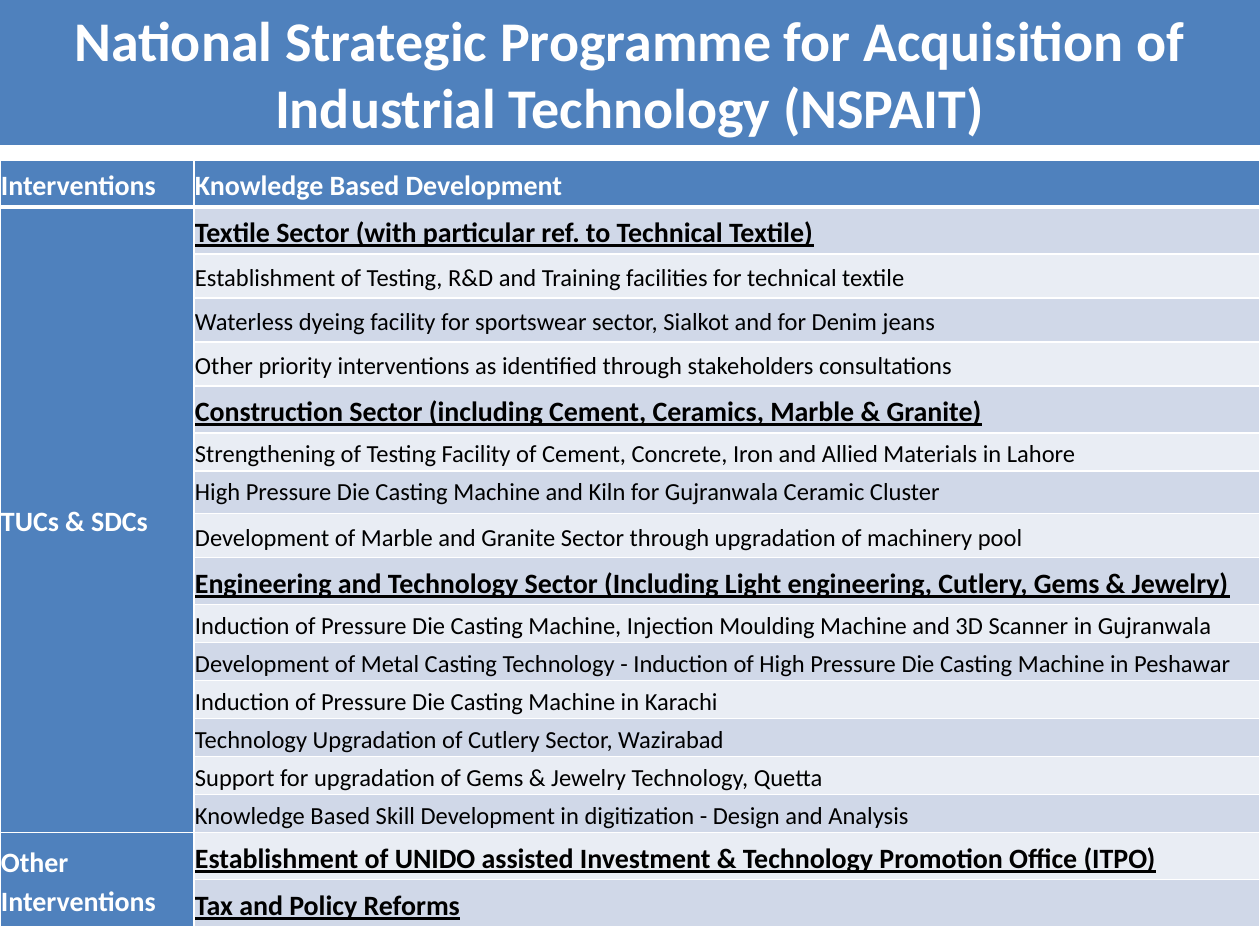
from lxml import etree
from pptx import Presentation
from pptx import util as u
from pptx.dml.color import RGBColor
from pptx.enum import text
from pptx.oxml import ns

PX = 914400 // 126
BLUE = RGBColor(0x4F, 0x81, 0xBD)
BAND_DARK = RGBColor(0xD0, 0xD8, 0xE8)
BAND_LIGHT = RGBColor(0xE9, 0xED, 0xF4)
WHITE = RGBColor(255, 255, 255)
BLACK = RGBColor(0, 0, 0)

TITLE = "National Strategic Programme for Acquisition of Industrial Technology (NSPAIT)"
HEADER = ("Interventions", "Knowledge Based Development")
HEADING_H, ROOMY_H, MEDIUM_H, TIGHT_H = 47, 44, 43, 38
CERAMIC = "High Pressure Die Casting Machine and Kiln for Gujranwala Ceramic Cluster"

# Each group spans its rows; a row is (wording, height), and HEADING_H marks a heading.
GROUPS = [
    ("TUCs & SDCs", [
        ("Textile Sector (with particular ref. to Technical Textile)", HEADING_H),
        ("Establishment of Testing, R&D and Training facilities for technical textile", ROOMY_H),
        ("Waterless dyeing facility for sportswear sector, Sialkot and for Denim jeans", ROOMY_H),
        ("Other priority interventions as identified through stakeholders consultations", ROOMY_H),
        ("Construction Sector (including Cement, Ceramics, Marble & Granite)", HEADING_H),
        ("Strengthening of Testing Facility of Cement, Concrete, Iron and Allied Materials in Lahore", TIGHT_H),
        (CERAMIC, MEDIUM_H),
        ("Development of Marble and Granite Sector through upgradation of machinery pool", ROOMY_H),
        ("Engineering and Technology Sector (Including Light engineering, Cutlery, Gems & Jewelry)", HEADING_H),
        ("Induction of Pressure Die Casting Machine, Injection Moulding Machine and 3D Scanner in Gujranwala", TIGHT_H),
        ("Development of Metal Casting Technology - Induction of High Pressure Die Casting Machine in Peshawar", TIGHT_H),
        ("Induction of Pressure Die Casting Machine in Karachi", TIGHT_H),
        ("Technology Upgradation of Cutlery Sector, Wazirabad", TIGHT_H),
        ("Support for upgradation of Gems & Jewelry Technology, Quetta", TIGHT_H),
        ("Knowledge Based Skill Development in digitization - Design and Analysis", TIGHT_H),
    ]),
    ("Other Interventions", [
        ("Establishment of UNIDO assisted Investment & Technology Promotion Office (ITPO)", HEADING_H),
        ("Tax and Policy Reforms", HEADING_H),
    ]),
]

LABEL = dict(size=u.Pt(16), bold=True, underline=False)
HEADING = dict(size=u.Pt(16), bold=True, underline=True)
ITEM = dict(size=u.Pt(14), bold=False, underline=False)
CELL = dict(margin_left=PX, margin_right=PX, margin_top=0, margin_bottom=0,
            vertical_anchor=text.MSO_ANCHOR.MIDDLE)


def set_all(target, values):
    for name, value in values.items():
        setattr(target, name, value)


def place(shape, box):
    set_all(shape, dict(zip(("left", "top", "width", "height"), (n * PX for n in box))))


def write(paragraph, words, color, font):
    run = paragraph.add_run()
    run.text = words
    set_all(run.font, dict(font, name="Calibri"))
    run.font.color.rgb = color


def set_borders(cell, bottom):
    """White rules of 1 pt, with the given weight below; they precede the fill."""
    properties = cell._tc.get_or_add_tcPr()
    for index, side in enumerate("LRTB"):
        line = etree.Element(ns.qn(f"a:ln{side}"), w=str(u.Pt(bottom if side == "B" else 1)))
        fill = etree.SubElement(line, ns.qn("a:solidFill"))
        etree.SubElement(fill, ns.qn("a:srgbClr"), val=str(WHITE))
        properties.insert(index, line)


def fill_cell(cell, words, fill, color, font, bottom=1):
    set_all(cell, CELL)
    cell.fill.solid()
    cell.fill.fore_color.rgb = fill
    set_borders(cell, bottom)
    paragraph = cell.text_frame.paragraphs[0]
    paragraph.line_spacing = 1.15
    write(paragraph, words, color, font)


def title_band(slide, box):
    title = slide.shapes.title
    place(title, box)
    title.fill.solid()
    title.fill.fore_color.rgb = BLUE
    set_all(title.text_frame, dict(word_wrap=True, auto_size=text.MSO_AUTO_SIZE.NONE,
                                   vertical_anchor=text.MSO_ANCHOR.MIDDLE))
    paragraph = title.text_frame.paragraphs[0]
    paragraph.alignment = text.PP_ALIGN.CENTER
    write(paragraph, TITLE, WHITE, dict(size=u.Pt(32), bold=True))


def interventions_table(slide, box, label_width):
    left, top, width, height = (n * PX for n in box)
    heights = [HEADING_H] + [h for _, rows in GROUPS for _, h in rows]
    table = slide.shapes.add_table(len(heights), 2, left, top, width, height).table
    table.columns[0].width = label_width * PX
    table.columns[1].width = width - label_width * PX
    for row, row_height in zip(table.rows, heights):
        row.height = row_height * PX
    for column, words in enumerate(HEADER):
        fill_cell(table.cell(0, column), words, BLUE, WHITE, LABEL, bottom=3)

    first = 1
    for label, rows in GROUPS:
        last = first + len(rows) - 1
        table.cell(first, 0).merge(table.cell(last, 0))
        fill_cell(table.cell(first, 0), label, BLUE, WHITE, LABEL)
        for index, (words, row_height) in enumerate(rows, first):
            cell = table.cell(index, 1)
            band = BAND_DARK if index % 2 else BAND_LIGHT
            fill_cell(cell, words, band, BLACK, HEADING if row_height == HEADING_H else ITEM)
            if words == CERAMIC:
                cell.text_frame.paragraphs[0].line_spacing = 1.0
        first = last + 1


def main():
    deck = Presentation()
    deck.slide_width, deck.slide_height = u.Inches(10), u.Inches(7.5)
    slide = deck.slides.add_slide(deck.slide_layouts[5])
    title_band(slide, (0, 0, 1260, 145))
    interventions_table(slide, (0, 160, 1260, 768), label_width=194)
    deck.save("out.pptx")


if __name__ == "__main__":
    main()
